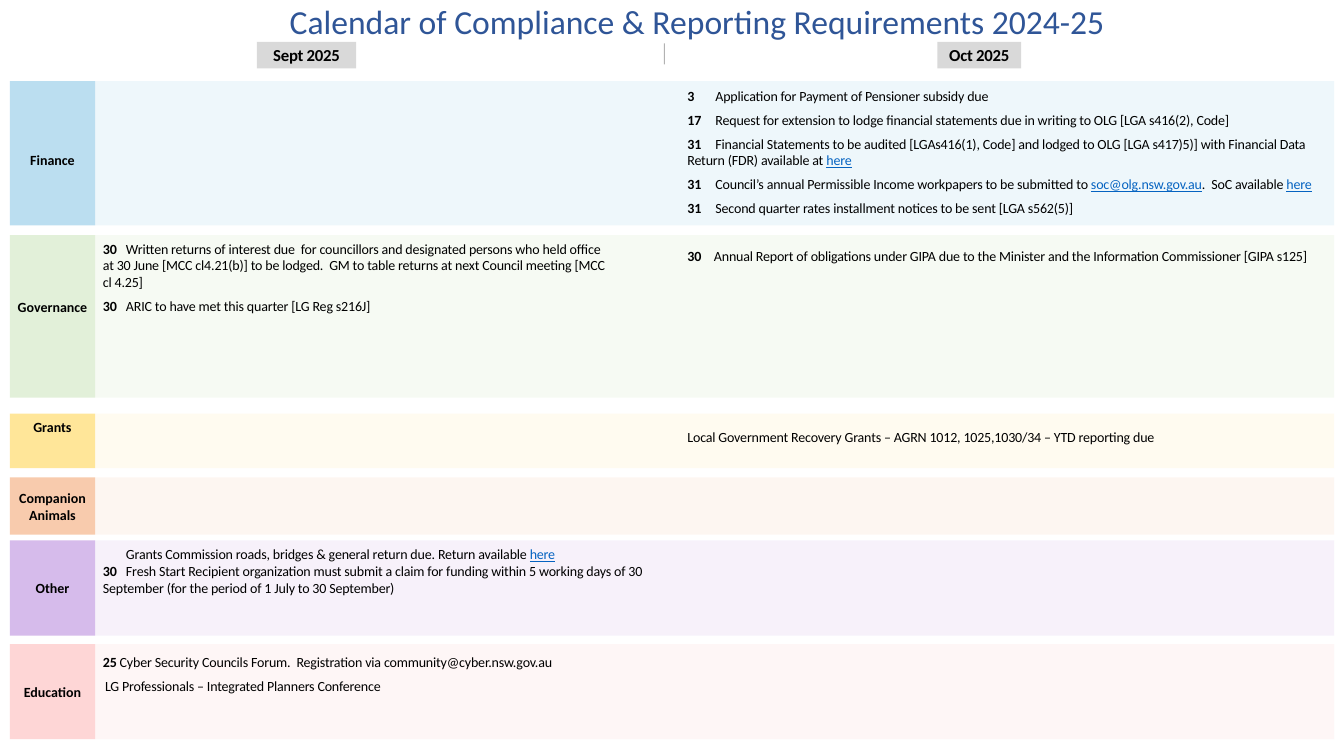
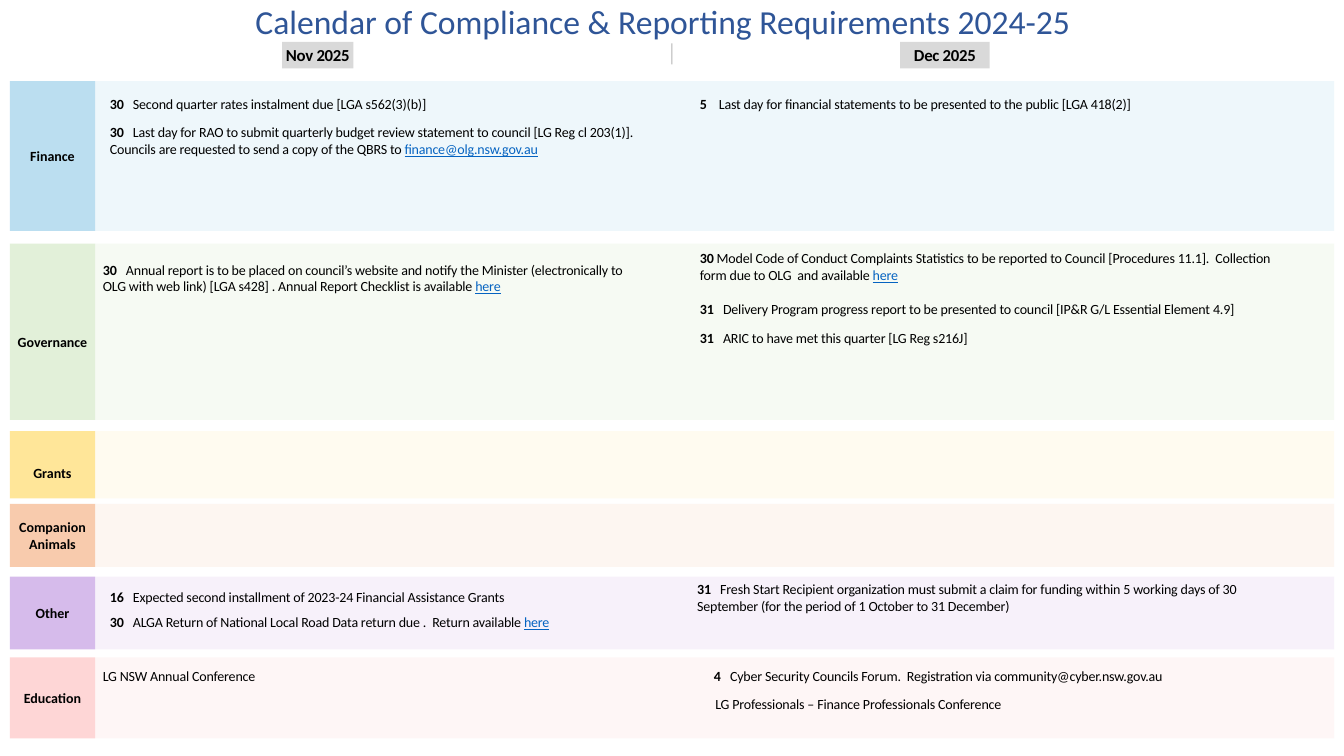
from lxml.etree import SubElement
from pptx import Presentation
from pptx.dml.color import RGBColor
from pptx.enum.shapes import MSO_CONNECTOR, MSO_SHAPE
from pptx.enum.text import MSO_ANCHOR, PP_ALIGN
from pptx.oxml import parse_xml
from pptx.oxml.ns import nsdecls, qn
from pptx.util import Pt

FONT = "Calibri"
TITLE = "Calendar of Compliance & Reporting Requirements 2024-25"
INK = {"text": "000000", "title": "2F5597", "link": "0563C1", "month": "D9D9D9"}
TABS = {
    "Finance": "BBDEF0", "Governance": "E2F0D9", "Grants": "FFE699",
    "Companion Animals": "F8CBAD", "Other": "D6BBEB", "Education": "FED6D6",
}
BANDS = {
    "Finance": "ADD8ED", "Governance": "D3E8C6", "Grants": "FFECB7",
    "Companion Animals": "F9D5BD", "Other": "D7BCEA", "Education": "FED6D6",
}
LEFT, SPLIT, RIGHT = 7, 68, 953  # tab start, tab end, band end


def fade(fill, share):
    """Make a solid fill see-through, with share as the opacity in percent."""
    color = fill._xPr.find(f".//{qn('a:srgbClr')}")
    SubElement(color, qn("a:alpha")).set("val", str(share * 1000))


class Deck:
    def __init__(self):
        self.file = Presentation()
        self.file.slide_width, self.file.slide_height = Pt(960), Pt(540)

    def page(self, middle, mark, cols):
        """Start a slide: title centre, divider position, (x, width) of columns."""
        self.slide = self.file.slides.add_slide(self.file.slide_layouts[6])
        self.cols, self.tops = cols, {}
        title = self.slide.shapes.add_textbox(Pt(middle - 310), Pt(-3), Pt(620), Pt(36))
        self.label(title, TITLE, 24, "title", bold=False)
        line = self.slide.shapes.add_connector(
            MSO_CONNECTOR.STRAIGHT, Pt(mark), Pt(31), Pt(mark), Pt(46))
        line.line.width = Pt(0.75)
        line.line.color.rgb = RGBColor.from_string(INK["text"])
        fade(line.line.fill, 30)
        SubElement(line._element.spPr, qn("a:effectLst"))

    def rect(self, x, y, width, height, color):
        shape = self.slide.shapes.add_shape(
            MSO_SHAPE.RECTANGLE, Pt(x), Pt(y), Pt(width), Pt(height))
        shape.shadow.inherit = False
        shape.fill.solid()
        shape.fill.fore_color.rgb = RGBColor.from_string(color)
        shape.line.fill.background()
        return shape

    def frame(self, shape, anchor):
        frame = shape.text_frame
        frame.word_wrap = True
        frame.vertical_anchor = anchor
        frame.margin_left = frame.margin_right = 0
        frame.margin_top = frame.margin_bottom = 0
        return frame

    def style(self, para, size, color="text", bold=False, space=0):
        font = para.font
        font.name, font.size, font.bold = FONT, Pt(size), bold
        font.color.rgb = RGBColor.from_string(INK[color])
        if space:
            font._element.set("spc", str(space))

    def label(self, shape, words, size, color="text", bold=True, space=0, shift=0):
        """Centre words in a shape, moved down by shift."""
        frame = self.frame(shape, MSO_ANCHOR.MIDDLE)
        frame.margin_top = Pt(max(0, 2 * shift))
        frame.margin_bottom = Pt(max(0, -2 * shift))
        para = frame.paragraphs[0]
        para.text = words
        para.alignment = PP_ALIGN.CENTER
        self.style(para, size, color, bold, space)

    def month(self, name, middle, width):
        box = self.rect(middle - width / 2, 30, width, 19, INK["month"])
        self.label(box, name, 12, space=-20)

    def rows(self, *sizes):
        """Draw all rows from (top, height, label shift)."""
        for name, (top, height, shift) in zip(TABS, sizes):
            band = self.rect(SPLIT, top, RIGHT - SPLIT, height, BANDS[name])
            fade(band.fill, 20)
            tab = self.rect(LEFT, top, SPLIT - LEFT, height, TABS[name])
            self.label(tab, name, 10, shift=shift)
            self.tops[name] = top

    def cell(self, name, col, drop, *notes, gap=16.5, space=5, inset=0, trim=0):
        """Write (day, words) notes in a row's column, drop below the row's top."""
        x, width = self.cols[col]
        shape = self.slide.shapes.add_textbox(
            Pt(x + inset), Pt(self.tops[name] + drop), Pt(width - trim), Pt(13))
        frame = self.frame(shape, MSO_ANCHOR.TOP)
        for i, (day, words) in enumerate(notes):
            para = frame.add_paragraph() if i else frame.paragraphs[0]
            para.space_before = Pt(space if i else 0)
            self.note(para, day, words, gap)

    def note(self, para, day, words, gap):
        """Write a bold day, then words at gap; words between bars are links."""
        self.style(para, 10, space=-10)
        if day:
            tabs = parse_xml(f'<a:tabLst {nsdecls("a")}>'
                             f'<a:tab pos="{Pt(gap)}" algn="l"/></a:tabLst>')
            para.font._element.addprevious(tabs)
            run = para.add_run()
            run.text = f"{day}\t"
            run.font.bold = True
        elif gap:
            para._p.get_or_add_pPr().set("indent", str(Pt(gap)))
        for i, part in enumerate(words.split("|")):
            if part:
                run = para.add_run()
                run.text = part
                if i % 2:
                    run.font.underline = True
                    run.font.color.rgb = RGBColor.from_string(INK["link"])


ARIC = ("30", "ARIC to have met this quarter [LG Reg s216J]")
FORUM = "Cyber Security Councils Forum.  Registration via community@cyber.nsw.gov.au"
CLAIM = ("Fresh Start Recipient organization must submit a claim for funding within "
         "5 working days of 30 September (for the period of {})")


def autumn(deck):
    """September and October."""
    deck.page(498, 474.5, [(73.5, 392), (491, 466)])
    deck.month("Sept 2025", 219, 71)
    deck.month("Oct 2025", 699.5, 60)
    deck.rows((58, 103, 5), (168, 116, -7), (295.5, 39, -10),
              (341, 41, 0), (386, 68, 0), (460, 68, 0))
    deck.cell(
        "Finance", 1, 4.5,
        ("3", "Application for Payment of Pensioner subsidy due"),
        ("17", "Request for extension to lodge financial statements due in writing to "
               "OLG [LGA s416(2), Code]"),
        ("31", "Financial Statements to be audited [LGAs416(1), Code] and lodged to OLG "
               "[LGA s417)5)] with Financial Data Return (FDR) available at |here|"),
        ("31", "Council’s annual Permissible Income workpapers to be submitted to "
               "|soc@olg.nsw.gov.au|.  SoC available |here|"),
        ("31", "Second quarter rates installment notices to be sent [LGA s562(5)]"),
        gap=20)
    deck.cell(
        "Governance", 0, 3.5,
        ("30", "Written returns of interest due  for councillors and designated persons "
               "who held office at 30 June [MCC cl4.21(b)] to be lodged.  GM to table "
               "returns at next Council meeting [MCC cl 4.25]"),
        ARIC, trim=31)
    deck.cell(
        "Governance", 1, 9,
        ("30", "Annual Report of obligations under GIPA due to the Minister and the "
               "Information Commissioner [GIPA s125]"), gap=19)
    deck.cell(
        "Grants", 1, 10.5,
        ("", "Local Government Recovery Grants – AGRN 1012, 1025,1030/34 – YTD "
             "reporting due"), gap=0)
    deck.cell(
        "Other", 0, 4,
        ("", "Grants Commission roads, bridges & general return due. Return available "
             "|here|"),
        ("30", CLAIM.format("1 July to 30 September")), space=0)
    deck.cell("Education", 0, 7, ("25", FORUM), gap=12)
    deck.cell("Education", 0, 24,
              ("", "LG Professionals – Integrated Planners Conference"), gap=1.5)


def summer(deck):
    """November and December."""
    deck.page(473.5, 480, [(73.5, 385), (500, 424)])
    deck.month("Nov 2025", 227, 51)
    deck.month("Dec 2025", 675, 64)
    deck.rows((58, 107, 0), (174, 126, 7), (308, 48, 6),
              (360, 45, 0), (412, 52, 0), (469.5, 58, 0))
    deck.cell(
        "Finance", 0, 10.5,
        ("30", "Second quarter rates instalment due [LGA s562(3)(b)]"),
        ("30", "Last day for RAO to submit quarterly budget review statement to council "
               "[LG Reg cl 203(1)].  Councils are requested to send a copy of the QBRS "
               "to |finance@olg.nsw.gov.au|"), space=8, inset=5)
    deck.cell(
        "Finance", 1, 10.5,
        ("5", "Last day for financial statements to be presented to the public "
              "[LGA 418(2)]"), gap=13.5)
    deck.cell(
        "Governance", 0, 12.5,
        ("30", "Annual report is to be placed on council’s website and notify the "
               "Minister (electronically to OLG with web link) [LGA s428] . Annual "
               "Report Checklist is available |here|"))
    deck.cell(
        "Governance", 1, 4.5,
        ("30", "Model Code of Conduct Complaints Statistics to be reported to Council "
               "[Procedures 11.1].  Collection form due to OLG  and available |here|"),
        gap=12)
    deck.cell(
        "Governance", 1, 40.5,
        ("31", "Delivery Program progress report to be presented to council "
               "[IP&R G/L Essential Element 4.9]"),
        ("31", ARIC[1]), space=8.5)
    deck.cell(
        "Other", 0, 8,
        ("16", "Expected second installment of 2023-24 Financial Assistance Grants"),
        ("30", "ALGA Return of National Local Road Data return due .  Return available "
               "|here|"), space=6.5, inset=5)
    deck.cell("Other", 1, 3, ("31", CLAIM.format("1 October to 31 December")), inset=-2)
    deck.cell("Education", 0, 7, ("", "LG NSW Annual Conference"), gap=0)
    deck.cell("Education", 1, 7.5, ("4", FORUM), gap=11.5, inset=10)
    deck.cell("Education", 1, 27.5,
              ("", "LG Professionals – Finance Professionals Conference"),
              gap=0, inset=11)


def main():
    deck = Deck()
    autumn(deck)
    summer(deck)
    deck.file.save("out.pptx")


if __name__ == "__main__":
    main()
